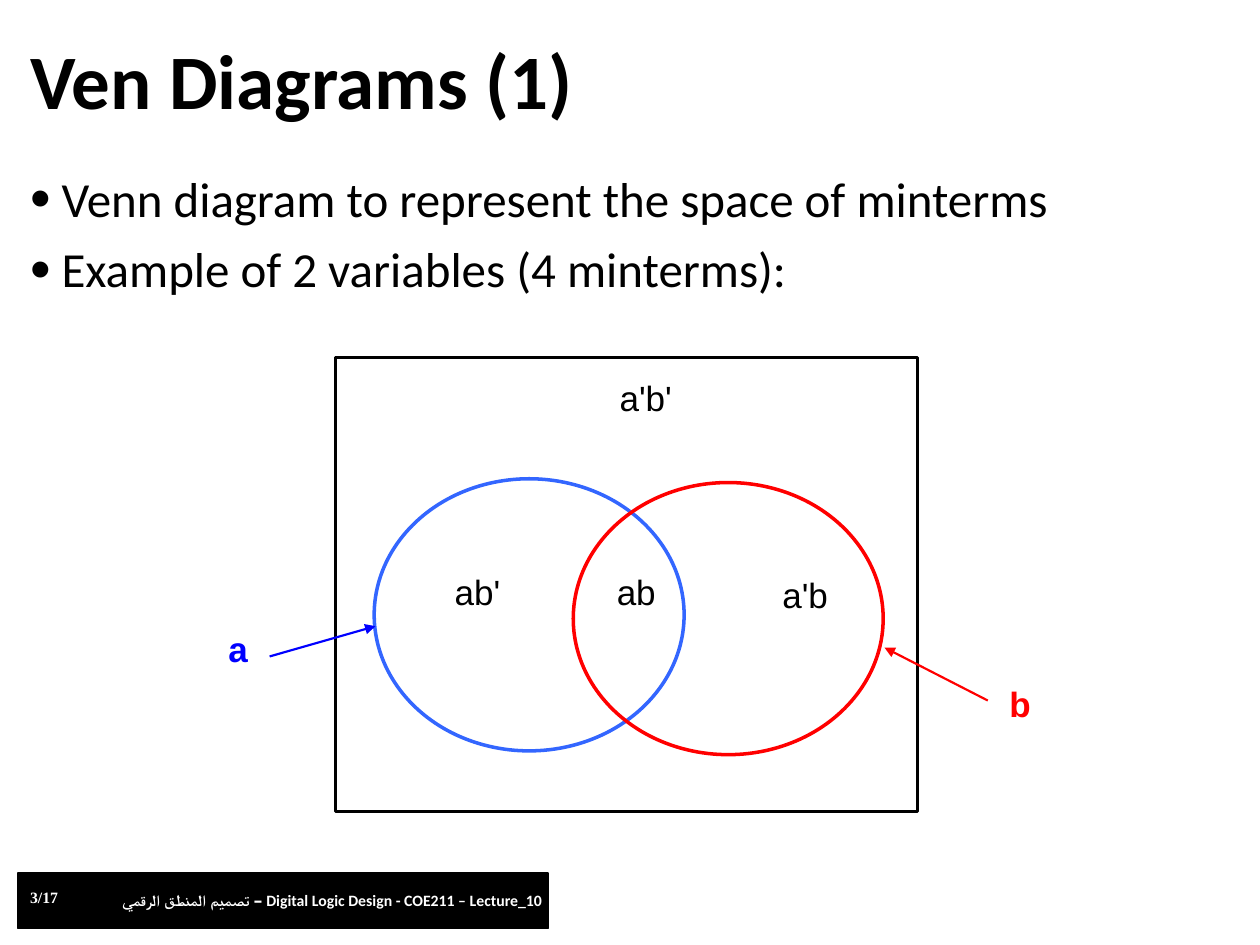
from dataclasses import dataclass

from lxml.etree import SubElement
from pptx import Presentation
from pptx.dml.color import RGBColor
from pptx.enum.shapes import MSO_CONNECTOR as Connector, MSO_SHAPE as Shape
from pptx.enum.text import MSO_ANCHOR as Anchor, MSO_AUTO_SIZE as AutoSize, PP_ALIGN as Align
from pptx.oxml.ns import qn
from pptx.util import Inches, Pt


@dataclass(frozen=True)
class Theme:
    heading: str = "Calibri"
    label: str = "Arial"
    number: str = "Times New Roman"
    black: str = "000000"
    white: str = "FFFFFF"
    blue: str = "0000FF"
    light_blue: str = "3366FF"
    red: str = "FF0000"
    title_size: int = 44
    body_size: int = 28
    label_size: int = 20
    footer_size: int = 9


@dataclass(frozen=True)
class Box:
    left: float
    top: float
    width: float
    height: float

    def inner(self, left, top, width, height):
        return Box(self.left + left, self.top + top, width, height)

    def point(self, column, row):
        return cells(self.left + column), cells(self.top + row)

    def lengths(self):
        return [cells(n) for n in (self.left, self.top, self.width, self.height)]


THEME = Theme()
COLUMNS, ROWS = 100, 75
CELL = Inches(10) / COLUMNS


def cells(count):
    return round(count * CELL)


def color(code):
    return RGBColor.from_string(code)


def set_font(para, name, size, code, bold=False):
    font = para.font
    font.name, font.size, font.bold = name, Pt(size), bold
    font.color.rgb = color(code)


def add_text(shapes, box, text, name, size, code, bold=False, align=Align.LEFT, wrap=True):
    frame = shapes.add_textbox(*box.lengths()).text_frame
    frame.word_wrap = wrap
    para = frame.paragraphs[0]
    para.text, para.alignment = text, align
    set_font(para, name, size, code, bold)
    return frame


def add_outline(shapes, kind, box, line, width, fill=None):
    shape = shapes.add_shape(kind, *box.lengths())
    shape.shadow.inherit = False
    if fill:
        shape.fill.solid()
        shape.fill.fore_color.rgb = color(fill)
    else:
        shape.fill.background()
    shape.line.color.rgb = color(line)
    shape.line.width = Pt(width)


def add_arrow(shapes, start, end, code):
    arrow = shapes.add_connector(Connector.STRAIGHT, *start, *end)
    arrow.line.color.rgb = color(code)
    arrow.line.width = Pt(1.25)
    properties = arrow._element.spPr
    SubElement(properties.find(qn("a:ln")), qn("a:tailEnd"), type="triangle")
    SubElement(properties, qn("a:effectLst"))


def add_footer(page, box):
    add_outline(page.shapes, Shape.RECTANGLE, box, THEME.black, 1, THEME.black)
    number = add_text(page.shapes, box.inner(0, 0.7, 5.1, 2.5), "3/17", THEME.number,
                      THEME.footer_size, THEME.white, True, wrap=False)
    course = add_text(page.shapes, box.inner(7.3, 0.9, 37.2, 2.5),
                      "تصميم المنطق الرقمي – Digital Logic Design - COE211 – Lecture_10",
                      THEME.heading, THEME.footer_size, THEME.white, True)
    for frame in (number, course):
        frame.auto_size = AutoSize.SHAPE_TO_FIT_TEXT


def add_title(page, box, text):
    title = page.shapes.title
    title.left, title.top, title.width, title.height = box.lengths()
    frame = title.text_frame
    frame.text = text
    frame.vertical_anchor = Anchor.MIDDLE
    para = frame.paragraphs[0]
    para.alignment, para.line_spacing = Align.LEFT, 0.9
    set_font(para, THEME.heading, THEME.title_size, THEME.black, True)


def add_bullets(page, box, lines):
    frame = page.shapes.add_textbox(*box.lengths()).text_frame
    frame.word_wrap = True
    bullet = (("a:buSzPct", {"val": "120000"}),
              ("a:buFont", {"typeface": THEME.label}),
              ("a:buChar", {"char": "•"}))
    for index, line in enumerate(lines):
        para = frame.add_paragraph() if index else frame.paragraphs[0]
        para.text, para.line_spacing, para.space_before = line, 0.9, Pt(10)
        set_font(para, THEME.heading, THEME.body_size, THEME.black)
        properties = para._p.get_or_add_pPr()
        properties.set("marL", str(Inches(0.25)))
        properties.set("indent", str(-Inches(0.25)))
        run_defaults = properties.find(qn("a:defRPr"))
        for tag, values in bullet:
            run_defaults.addprevious(SubElement(properties, qn(tag), values))


def add_venn(page, box):
    shapes = page.shapes.add_group_shape().shapes
    add_outline(shapes, Shape.RECTANGLE, box, THEME.black, 1.75)
    for left, top, code in ((3.1, 9.6, THEME.light_blue), (18.9, 9.9, THEME.red)):
        add_outline(shapes, Shape.OVAL, box.inner(left, top, 24.6, 21.6), code, 2)

    minterms = (("ab'", 6.1, 16.4, 10.4), ("a'b", 32.1, 16.6, 10.4),
                ("a'b'", 18.3, 1, 12.7), ("ab", 18.7, 16.4, 10.4))
    for text, left, top, width in minterms:
        add_text(shapes, box.inner(left, top, width, 9), text, THEME.label,
                 THEME.label_size, THEME.black, align=Align.CENTER)

    variables = (("a", (-11.9, 20.9, 8.4, 8.6), (-5.2, 23.7), (3.2, 21.3), THEME.blue),
                 ("b", (49.8, 25.3, 9.1, 7.2), (51.8, 27.2), (43.6, 23), THEME.red))
    for text, place, start, end, code in variables:
        add_text(shapes, box.inner(*place), text, THEME.label, THEME.label_size,
                 code, True, Align.CENTER)
        add_arrow(shapes, box.point(*start), box.point(*end), code)


def main():
    deck = Presentation()
    deck.slide_width, deck.slide_height = cells(COLUMNS), cells(ROWS)
    page = deck.slides.add_slide(deck.slide_layouts[5])
    add_footer(page, Box(1.4, 69.3, 42.1, 4.4))
    add_title(page, Box(1.4, 2.5, 97.4, 8.5), "Ven Diagrams (1)")
    add_bullets(page, Box(1.4, 13.4, 97.4, 54.1),
                ("Venn diagram to represent the space of minterms",
                 "Example of 2 variables (4 minterms):"))
    add_venn(page, Box(26.6, 28.4, 46.2, 36))
    deck.save("out.pptx")


if __name__ == "__main__":
    main()
